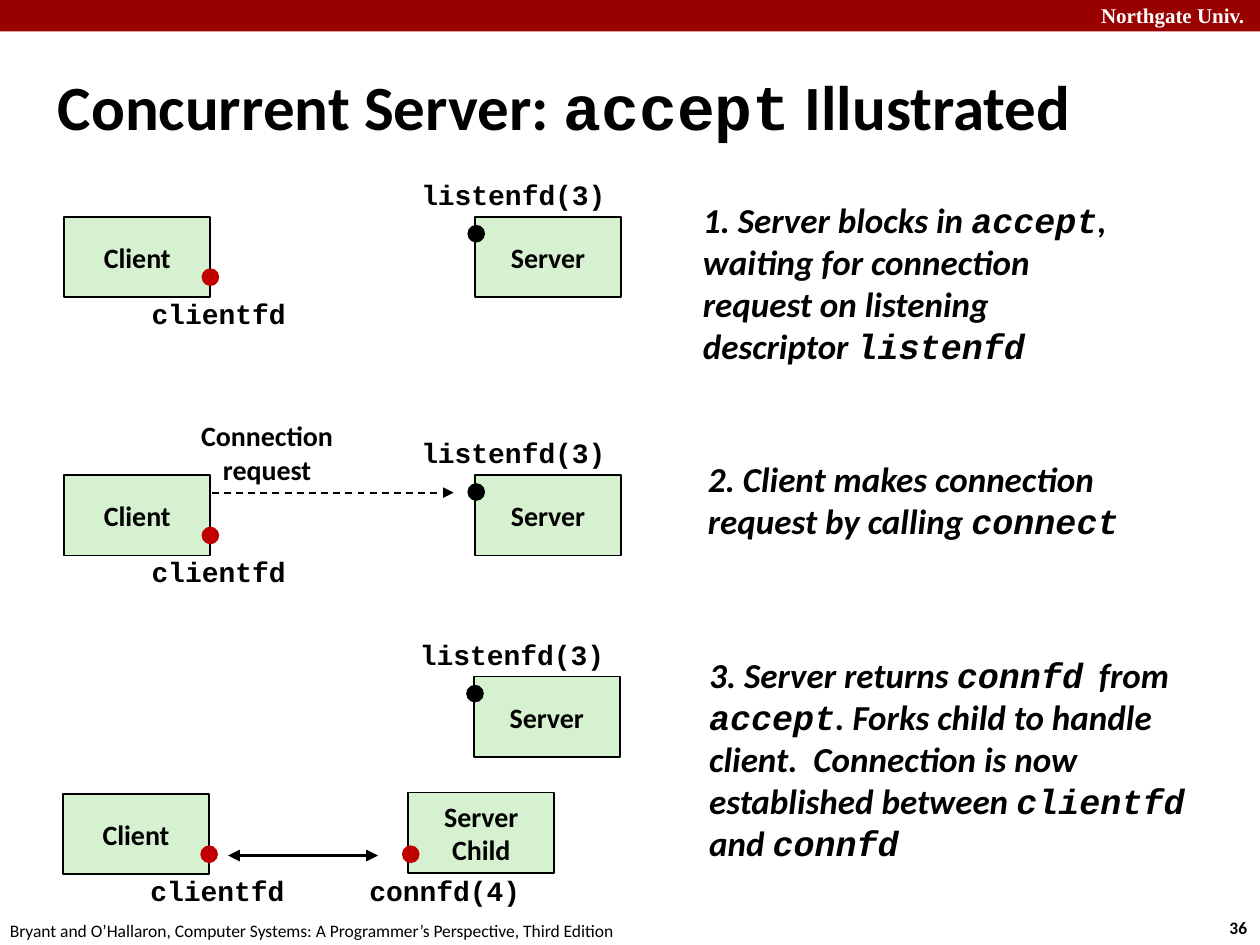
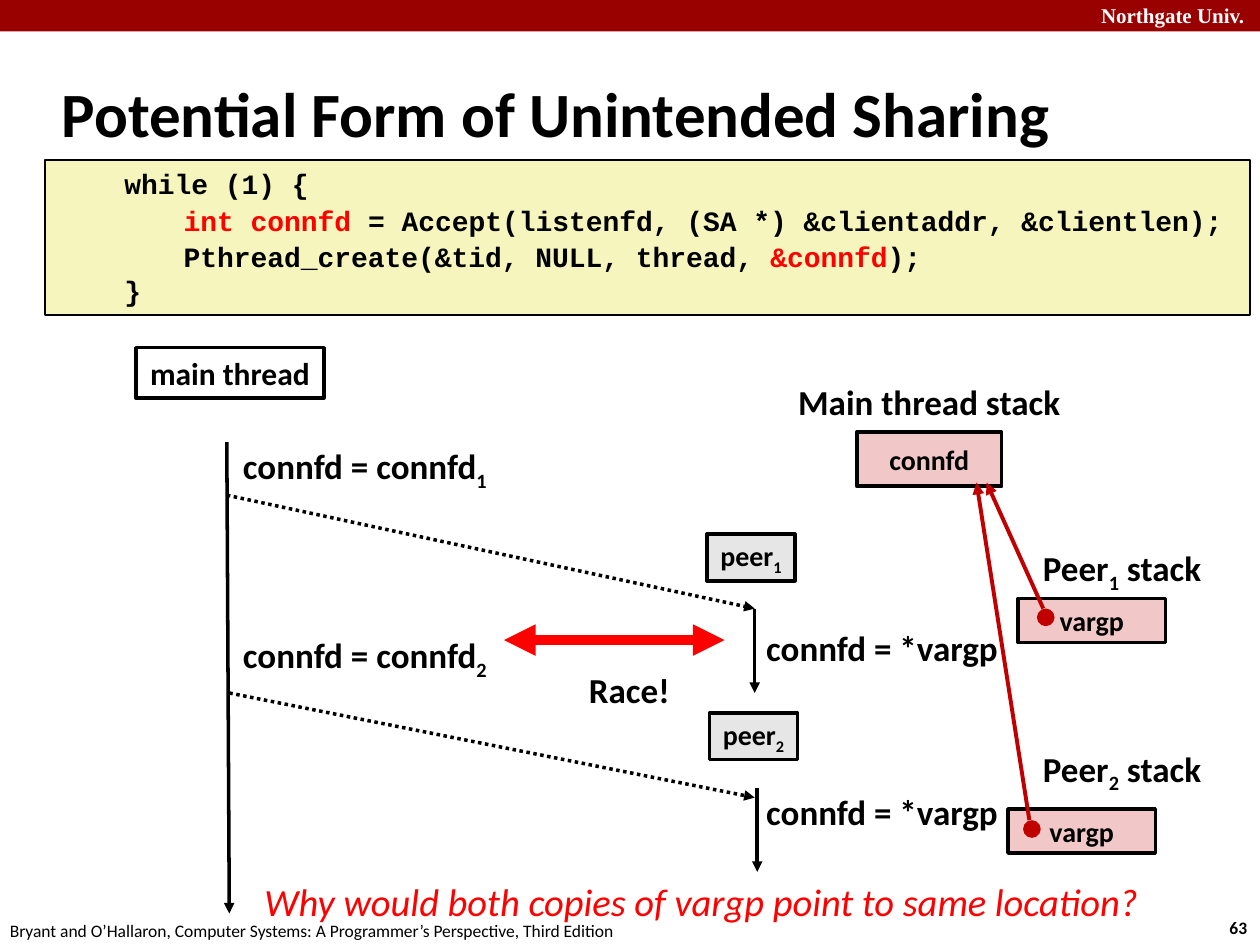
import pptx
import pptx.dml.color
import pptx.enum.dml
import pptx.enum.shapes
import pptx.enum.text
import pptx.oxml
import pptx.oxml.ns
import pptx.util

COLORS = {
    "black": "000000",
    "white": "FFFFFF",
    "band": "990000",
    "process": "D5F1CF",
    "socket": "C00000",
    "code": "F6F5BD",
    "stack": "F1C7C7",
    "peer": "E6E6E6",
    "alert": "FF0000",
}
SANS, MONO, SERIF = "Calibri", "Courier New", "Times New Roman"
WIDTH, HEIGHT = pptx.util.Inches(10), pptx.util.Inches(7.5)
COLUMNS, ROWS = 100, 75
DOT = 1.4
BOX_WIDTH, BOX_HEIGHT = 11.6, 6.4

SHAPES = pptx.enum.shapes.MSO_SHAPE
ALIGN = pptx.enum.text.PP_ALIGN
ANCHOR = pptx.enum.text.MSO_ANCHOR
DASH = pptx.enum.dml.MSO_LINE


def across(columns):
    return round(WIDTH * columns / COLUMNS)


def down(rows):
    return round(HEIGHT * rows / ROWS)


def place(col, row, width, height):
    return across(col), down(row), across(width), down(height)


def rgb(name):
    return pptx.dml.color.RGBColor.from_string(COLORS[name])


def mono(words):
    return words, {"font": MONO}


def sub(digit):
    return digit, {"baseline": -25000}


def red(words):
    return words, {"color": "alert"}


def style_run(run, size, font=SANS, color="black", bold=True, italic=False, baseline=0):
    run.font.size = pptx.util.Pt(size)
    run.font.name = font
    run.font.bold = bold
    run.font.italic = italic
    run.font.color.rgb = rgb(color)
    if baseline:
        run.font._element.set("baseline", str(baseline))


def write(holder, *lines, align=ALIGN.CENTER, anchor=ANCHOR.MIDDLE, wrap=False, **style):
    frame = holder.text_frame
    frame.auto_size = pptx.enum.text.MSO_AUTO_SIZE.NONE
    frame.word_wrap = wrap
    frame.vertical_anchor = anchor
    for number, line in enumerate(lines):
        paragraph = frame.add_paragraph() if number else frame.paragraphs[0]
        paragraph.alignment = align
        for piece in [line] if isinstance(line, str) else line:
            words, changes = (piece, {}) if isinstance(piece, str) else piece
            run = paragraph.add_run()
            run.text = words
            style_run(run, **{**style, **changes})
    return frame.paragraphs


def label(slide, area, *lines, size=20, **style):
    return write(slide.shapes.add_textbox(*place(*area)), *lines, size=size, **style)


def draw(slide, kind, area, fill=None, border=0):
    shape = slide.shapes.add_shape(kind, *place(*area))
    shape.shadow.inherit = False
    if fill:
        shape.fill.solid()
        shape.fill.fore_color.rgb = rgb(fill)
    else:
        shape.fill.background()
    if border:
        shape.line.color.rgb = rgb("black")
        shape.line.width = pptx.util.Pt(border)
    else:
        shape.line.fill.background()
    return shape


def box(slide, area, *lines, fill=None, border=2, size=16):
    write(draw(slide, SHAPES.RECTANGLE, area, fill, border), *lines, size=size)


def dot(slide, col, row, color="socket"):
    draw(slide, SHAPES.OVAL, (col, row, DOT, DOT), color)


def arrow(slide, start, end, color="black", weight=2, dash=None, both=False):
    connector = slide.shapes.add_connector(
        pptx.enum.shapes.MSO_CONNECTOR.STRAIGHT,
        across(start[0]), down(start[1]), across(end[0]), down(end[1]))
    connector.line.color.rgb = rgb(color)
    connector.line.width = pptx.util.Pt(weight)
    if dash:
        connector.line.dash_style = dash
    outline = connector._element.spPr
    stroke = outline.find(pptx.oxml.ns.qn("a:ln"))
    for tip in ["headEnd", "tailEnd"] if both else ["tailEnd"]:
        stroke.append(pptx.oxml.parse_xml(
            f'<a:{tip} {pptx.oxml.ns.nsdecls("a")} type="triangle"/>'))
    outline.append(pptx.oxml.parse_xml(f'<a:effectLst {pptx.oxml.ns.nsdecls("a")}/>'))


def start_slide(deck, number, title_area, *title):
    slide = deck.slides.add_slide(deck.slide_layouts[5])
    heading = slide.shapes.title
    heading.left, heading.top, heading.width, heading.height = place(*title_area)
    write(heading, title, size=36, align=ALIGN.LEFT, wrap=True)
    draw(slide, SHAPES.RECTANGLE, (0, 0, COLUMNS, 2.5), "band")
    label(slide, (86.4, -0.3, 14.3, 3), "Northgate Univ.", size=12, font=SERIF,
          color="white", align=ALIGN.LEFT, anchor=ANCHOR.TOP)
    label(slide, (96.6, 72.3, 3.7, 2.7), str(number), size=10, align=ALIGN.LEFT)
    label(slide, (-0.2, 72.5, 50.8, 2.7),
          "Bryant and O’Hallaron, Computer Systems: A Programmer’s Perspective, Third Edition",
          size=10, bold=False, align=ALIGN.LEFT)
    return slide


def process(slide, col, row, *name):
    box(slide, (col, row, BOX_WIDTH, BOX_HEIGHT), *name, fill="process", border=1)


def descriptor(slide, area, name):
    label(slide, area, name, size=16, font=MONO)


def client(slide, col, row):
    process(slide, col, row, "Client")
    dot(slide, col + 10.9, row + 4.1)
    descriptor(slide, (col + 5.9, row + 5.8, 12.7, 3.7), "clientfd")


def server(slide, col, row):
    process(slide, col, row, "Server")
    dot(slide, col - 0.6, row + 0.65, "black")
    descriptor(slide, (col - 5.3, row - 3.65, 16.7, 3.7), "listenfd(3)")


def server_child(slide, col, row):
    process(slide, col, row, "Server", "Child")
    dot(slide, col - 0.5, row + 4.2)
    descriptor(slide, (col - 4.1, row + 5.9, 14, 3.7), "connfd(4)")


def step(slide, area, *runs):
    label(slide, area, runs, italic=True, align=ALIGN.LEFT, wrap=True)


def accept_slide(deck):
    slide = start_slide(deck, 36, (3.6, 5.2, 91.7, 6.3),
                        "Concurrent Server: ", mono("accept"), " Illustrated")
    for row in (17.2, 37.7):
        client(slide, 5.1, row)
        server(slide, 37.7, row)
    client(slide, 5, 63)
    server(slide, 37.6, 53.7)
    server_child(slide, 32.4, 62.9)

    arrow(slide, (16.8, 39.1), (36, 39.1), weight=1, dash=DASH.DASH)
    label(slide, (14.9, 32.7, 12.6, 6.4), "Connection", "request", size=16)
    arrow(slide, (18.1, 67.9), (30, 67.9), weight=2.25, both=True)

    step(slide, (54.8, 15.2, 36, 14.5), "1. Server blocks in ", mono("accept"),
         ", waiting for connection request on listening descriptor ", mono("listenfd"))
    step(slide, (55.2, 35.8, 40.1, 7.7),
         "2. Client makes connection request by calling ", mono("connect"))
    step(slide, (55.3, 51.3, 43.9, 17.8), "3. Server returns ", mono("connfd"), "  from ",
         mono("accept"), ". Forks child to handle client.  Connection is now established between ",
         mono("clientfd"), " and ", mono("connfd"))


def code_listing(slide, area):
    listing = draw(slide, SHAPES.RECTANGLE, area, "code", 1)
    lines = write(
        listing,
        "while (1) {",
        [red("int connfd "), "= Accept(listenfd, (SA *) &clientaddr, &clientlen);"],
        ["Pthread_create(&tid, NULL, thread, ", red("&connfd"), ");"],
        "}",
        size=16, font=MONO, align=ALIGN.LEFT, anchor=ANCHOR.TOP, wrap=True)
    for line, indent in zip(lines, (5.3, 10, 10, 5.3)):
        line._p.get_or_add_pPr().set("marL", str(across(indent)))
    for line in lines[1:3]:
        line.line_spacing = 1.1


def peer_thread(slide, number, spawn, begin, assign_row, read_row):
    col, row = begin
    arrow(slide, spawn, (59.9, row + (0.8 if number == "2" else 0)), dash=DASH.ROUND_DOT)
    arrow(slide, begin, (col, row + 6.7))
    box(slide, (col - 3.8, row - 5.9, 7, 3.7), ["peer", sub(number)], fill="peer")
    label(slide, (18.3, assign_row, 21.8, 4.4), ["connfd = connfd", sub(number)],
          align=ALIGN.LEFT)
    label(slide, (59.2, read_row, 21.3, 4.4), " connfd = *vargp", align=ALIGN.LEFT)


def peer_stack(slide, number, title_row, variable, marker, target):
    label(slide, (81.6, title_row, 14.9, 4.4), ["Peer", sub(number), " stack"])
    box(slide, (*variable, 11.7, 3.5), "vargp", fill="stack")
    arrow(slide, (marker[0] + DOT / 2 - 0.2, marker[1]), target, "socket", 2.25)
    dot(slide, *marker)


def sharing_slide(deck):
    slide = start_slide(deck, 63, (3.9, 4.8, 83, 8.3), "Potential Form of Unintended Sharing")
    code_listing(slide, (3.6, 12.7, 95.6, 12.3))

    box(slide, (10.8, 27.6, 14.9, 4), "main thread", size=18)
    arrow(slide, (18, 35.1), (18.2, 72.5))
    peer_thread(slide, "1", (18, 39.3), (59.9, 48.3), 35, 49.2)
    peer_thread(slide, "2", (18.2, 55), (60.1, 62.5), 50, 62.2)

    arrow(slide, (40, 50.8), (57.5, 50.8), "alert", 6, both=True)
    label(slide, (45.7, 52.5, 8.5, 4.4), "Race!")

    label(slide, (62.2, 29.7, 23.1, 4.4), "Main thread stack")
    box(slide, (68, 34.3, 11.5, 4.3), "connfd", fill="stack")
    peer_stack(slide, "1", 43.1, (80.8, 47.5), (82.3, 48.3), (78.3, 38.3))
    peer_stack(slide, "2", 59, (80, 64.2), (81.2, 65.1), (77.5, 38.3))

    label(slide, (20, 69.2, 74.9, 4.7), "Why would both copies of vargp point to same location?",
          size=22, color="alert", bold=False, italic=True, align=ALIGN.LEFT)


def main():
    deck = pptx.Presentation()
    deck.slide_width, deck.slide_height = WIDTH, HEIGHT
    accept_slide(deck)
    sharing_slide(deck)
    deck.save("out.pptx")


if __name__ == "__main__":
    main()
